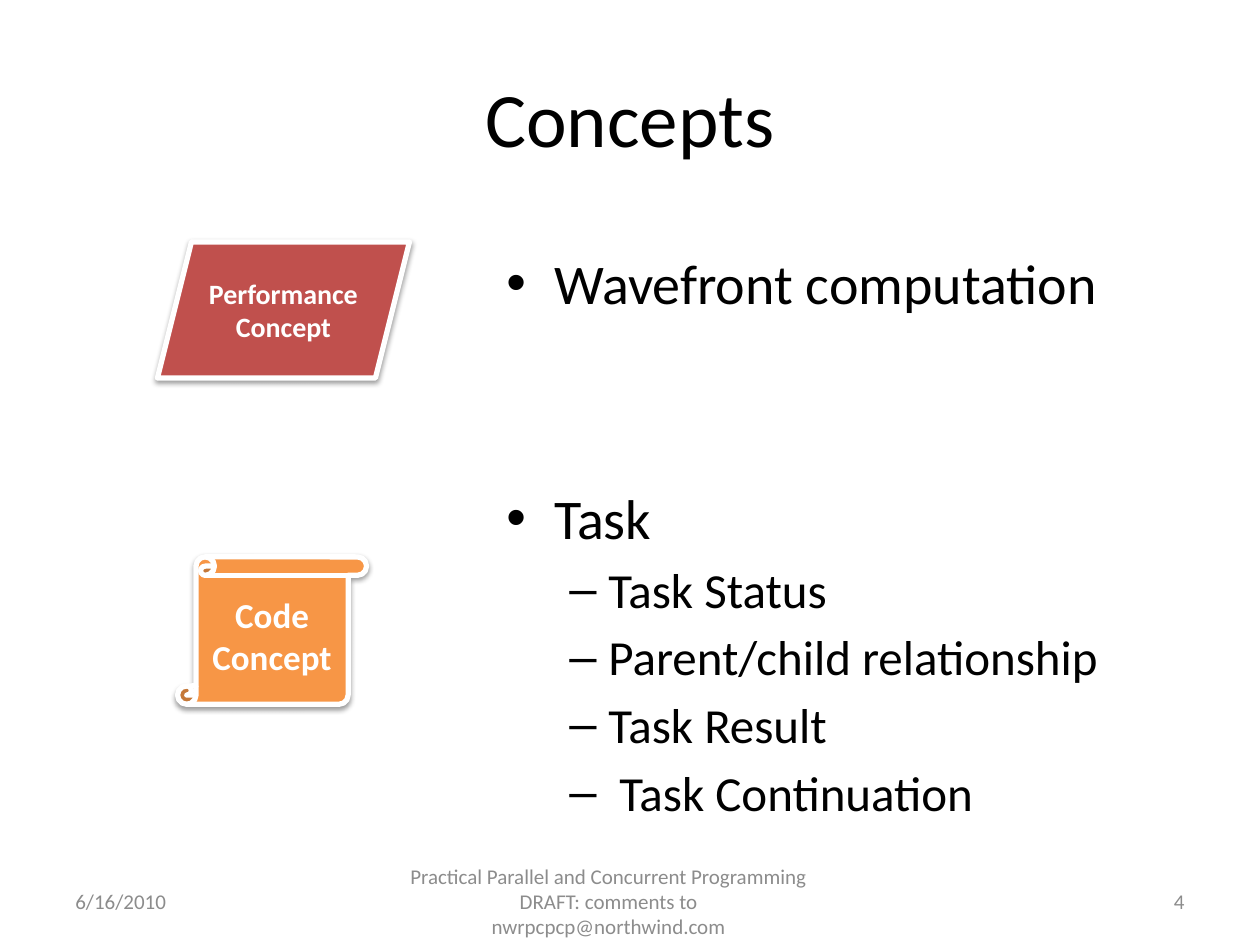
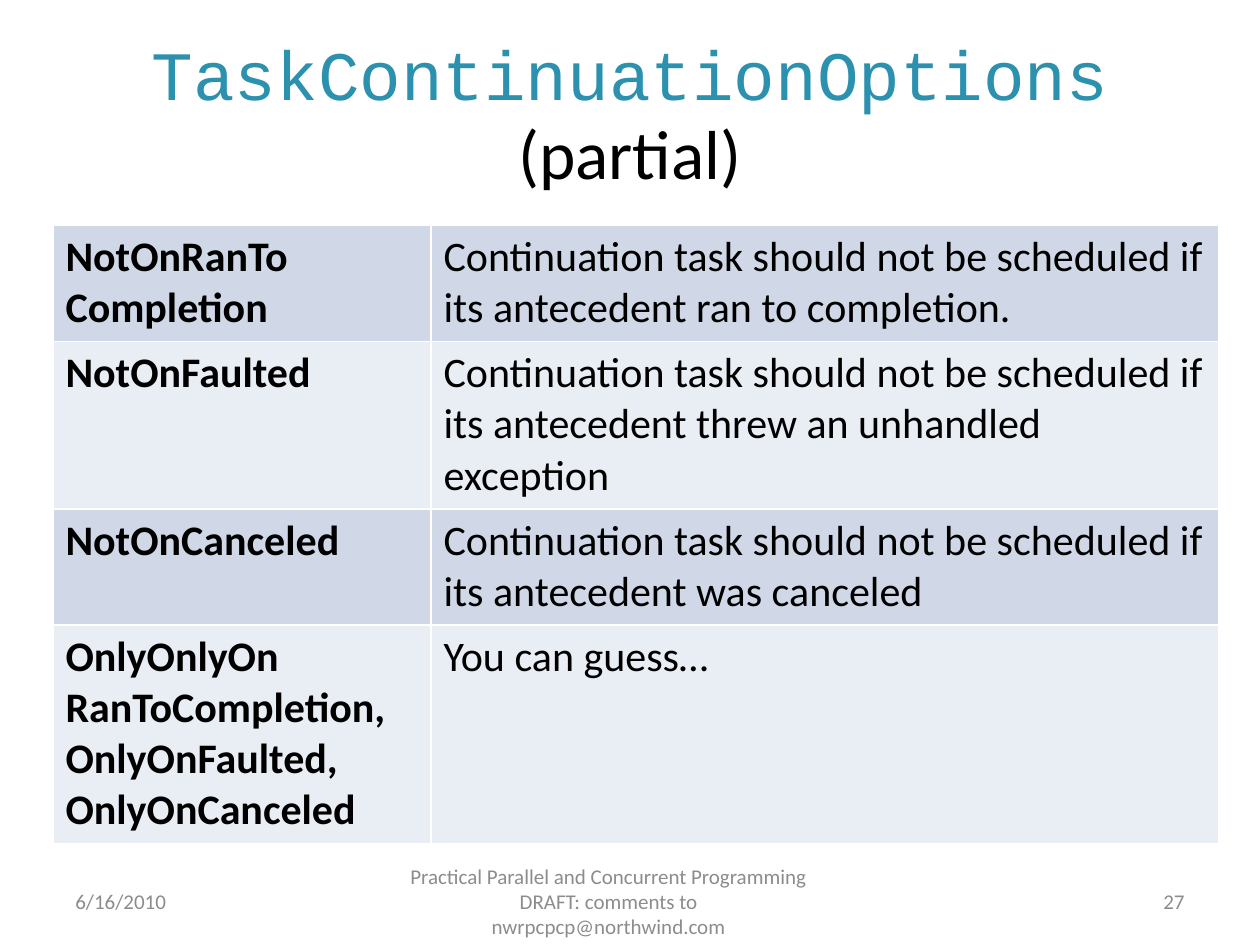
"""Builds the concepts slide and the continuation options slide."""
import pptx
import pptx.util
import pptx.dml.color
import pptx.enum.shapes
import pptx.enum.text
import pptx.oxml
import pptx.oxml.ns

Inches = pptx.util.Inches
Pt = pptx.util.Pt
ALIGN = pptx.enum.text.PP_ALIGN
ANCHOR = pptx.enum.text.MSO_ANCHOR
SHAPE = pptx.enum.shapes.MSO_SHAPE
NAMESPACE = pptx.oxml.ns.nsdecls("a")


def color(hex_string):
    """Turn a hex string into a colour."""
    return pptx.dml.color.RGBColor.from_string(hex_string)


class Deck:
    """Holds the shared style and the slide being built."""

    FONT = "Calibri"
    CODE_FONT = "Courier New"
    BLACK, WHITE, GREY = "000000", "FFFFFF", "8C8C8C"
    TYPE_BLUE = "2B91AF"
    BANDS = ("D0D8E8", "E9EDF4")
    DATE = "6/16/2010"
    COURSE = ("Practical Parallel and Concurrent Programming "
              "DRAFT: comments to nwrpcpcp@northwind.com")
    BULLETS = (("•", 0.38, 0.38, 32, 6), ("–", 0.81, 0.31, 28, 5))

    def __init__(self):
        """Start an empty 4:3 presentation."""
        self.presentation = pptx.Presentation()
        self.presentation.slide_width = Inches(10)
        self.presentation.slide_height = Inches(7.5)
        self.slide = None

    def run(self, paragraph, text, size, hue=BLACK, bold=False, font=FONT):
        """Add one formatted run."""
        run = paragraph.add_run()
        run.text = text
        run.font.name = font
        run.font.size = Pt(size)
        run.font.bold = bold
        run.font.color.rgb = color(hue)

    def lines(self, frame, texts, size, hue=BLACK, bold=False, align=ALIGN.LEFT):
        """Write each text as a paragraph of the frame."""
        for index, text in enumerate(texts):
            paragraph = frame.paragraphs[0] if index == 0 else frame.add_paragraph()
            paragraph.alignment = align
            self.run(paragraph, text, size, hue, bold)

    def textbox(self, left, top, width, height, anchor=ANCHOR.TOP):
        """Add a wrapping text box and return its frame."""
        box = self.slide.shapes.add_textbox(
            Inches(left), Inches(top), Inches(width), Inches(height))
        box.text_frame.word_wrap = True
        box.text_frame.vertical_anchor = anchor
        return box.text_frame

    def new_slide(self, number, title_parts, size, spacing=1.0):
        """Start a slide with its title lines and footer."""
        self.slide = self.presentation.slides.add_slide(
            self.presentation.slide_layouts[5])
        title = self.slide.shapes.title
        title.left, title.top = Inches(0.5), Inches(0.3)
        title.width, title.height = Inches(9), Inches(1.25)
        frame = title.text_frame
        frame.auto_size = pptx.enum.text.MSO_AUTO_SIZE.NONE
        frame.vertical_anchor = ANCHOR.MIDDLE
        heading = frame.paragraphs[0]
        heading.alignment = ALIGN.CENTER
        heading.line_spacing = spacing
        for index, (text, hue, font) in enumerate(title_parts):
            if index:
                heading.add_line_break()
            self.run(heading, text, size, hue, font=font)
        self.footer(number)

    def footer(self, number):
        """Add the date, course and slide number."""
        for left, width, text, align in (
                (0.5, 2.33, self.DATE, ALIGN.LEFT),
                (3.08, 3.5, self.COURSE, ALIGN.CENTER),
                (7.17, 2.33, str(number), ALIGN.RIGHT)):
            frame = self.textbox(left, 6.95, width, 0.4, ANCHOR.MIDDLE)
            self.lines(frame, [text], 12, self.GREY, align=align)

    def bullets(self, left, top, width, height, items):
        """Add a bulleted list of (level, text, extra space before)."""
        frame = self.textbox(left, top, width, height)
        for index, (level, text, extra) in enumerate(items):
            mark, margin, hanging, size, gap = self.BULLETS[level]
            paragraph = frame.paragraphs[0] if index == 0 else frame.add_paragraph()
            paragraph.level = level
            paragraph.space_before = Pt(gap + extra)
            properties = paragraph._p.get_or_add_pPr()
            properties.set("marL", str(Inches(margin)))
            properties.set("indent", str(-Inches(hanging)))
            for xml in (f'<a:buFont {NAMESPACE} typeface="Arial"/>',
                        f'<a:buChar {NAMESPACE} char="{mark}"/>'):
                properties.append(pptx.oxml.parse_xml(xml))
            self.run(paragraph, text, size)

    def badge(self, kind, left, top, width, height, texts, fill, size):
        """Add a white-edged shape with a soft shadow and bold label."""
        badge = self.slide.shapes.add_shape(
            kind, Inches(left), Inches(top), Inches(width), Inches(height))
        badge.fill.solid()
        badge.fill.fore_color.rgb = color(fill)
        badge.line.color.rgb = color(self.WHITE)
        badge.line.width = Pt(3)
        badge.shadow.inherit = False
        effects = badge._element.spPr.find(pptx.oxml.ns.qn("a:effectLst"))
        effects.append(pptx.oxml.parse_xml(
            f'<a:outerShdw {NAMESPACE} blurRad="{Pt(3.1)}" dist="{Pt(1.6)}" '
            f'dir="5400000" rotWithShape="0"><a:srgbClr val="{self.BLACK}">'
            '<a:alpha val="38000"/></a:srgbClr></a:outerShdw>'))
        badge.text_frame.word_wrap = True
        badge.text_frame.vertical_anchor = ANCHOR.MIDDLE
        self.lines(badge.text_frame, texts, size, self.WHITE, True, ALIGN.CENTER)

    def cell_borders(self, cell):
        """Give a cell thin white borders on all sides."""
        properties = cell._tc.get_or_add_tcPr()
        for index, side in enumerate(("lnL", "lnR", "lnT", "lnB")):
            properties.insert(index, pptx.oxml.parse_xml(
                f'<a:{side} {NAMESPACE} w="{Pt(1)}"><a:solidFill>'
                f'<a:srgbClr val="{self.WHITE}"/></a:solidFill></a:{side}>'))

    def table(self, left, top, widths, rows):
        """Add a banded table of (option names, meaning, line count)."""
        heights = [Inches(0.1 + 0.41 * count) for _, _, count in rows]
        table = self.slide.shapes.add_table(
            len(rows), len(widths), Inches(left), Inches(top),
            Inches(sum(widths)), sum(heights)).table
        table.first_row = False
        for column, width in zip(table.columns, widths):
            column.width = Inches(width)
        for index, (names, meaning, _) in enumerate(rows):
            table.rows[index].height = heights[index]
            for column, texts in enumerate((names, [meaning])):
                cell = table.cell(index, column)
                cell.fill.solid()
                cell.fill.fore_color.rgb = color(self.BANDS[index % 2])
                self.cell_borders(cell)
                self.lines(cell.text_frame, texts, 24, bold=column == 0)


def concepts(deck):
    """Build the slide that lists the concepts."""
    deck.new_slide(4, [("Concepts", deck.BLACK, deck.FONT)], 44)
    deck.bullets(3.92, 1.92, 5.58, 4.78, [
        (0, "Wavefront computation", 0),
        (0, "Task", 90),
        (1, "Task Status", 0),
        (1, "Parent/child relationship", 0),
        (1, "Task Result", 0),
        (1, " Task Continuation", 0),
    ])
    deck.badge(SHAPE.VERTICAL_SCROLL, 1.41, 4.42, 1.5, 1.17,
               ["Code", "Concept"], "F79646", 20)
    deck.badge(SHAPE.PARALLELOGRAM, 1.25, 1.92, 2, 1.08,
               ["Performance", "Concept"], "C0504D", 16)


def continuation_options(deck):
    """Build the slide with the table of continuation options."""
    deck.new_slide(27, [
        ("TaskContinuationOptions", deck.TYPE_BLUE, deck.CODE_FONT),
        ("(partial)", deck.BLACK, deck.FONT),
    ], 39.6, 0.95)
    rule = "Continuation task should not be scheduled if its antecedent "
    deck.table(0.42, 1.79, (3, 6.25), [
        (["NotOnRanTo", "Completion"], rule + "ran to completion.", 2),
        (["NotOnFaulted"], rule + "threw an unhandled exception", 3),
        (["NotOnCanceled"], rule + "was canceled", 2),
        (["OnlyOnlyOn", "RanToCompletion,", "OnlyOnFaulted,", "OnlyOnCanceled"],
         "You can guess…", 4),
    ])


def main():
    """Build and save both slides."""
    deck = Deck()
    concepts(deck)
    continuation_options(deck)
    deck.presentation.save("out.pptx")


if __name__ == "__main__":
    main()
